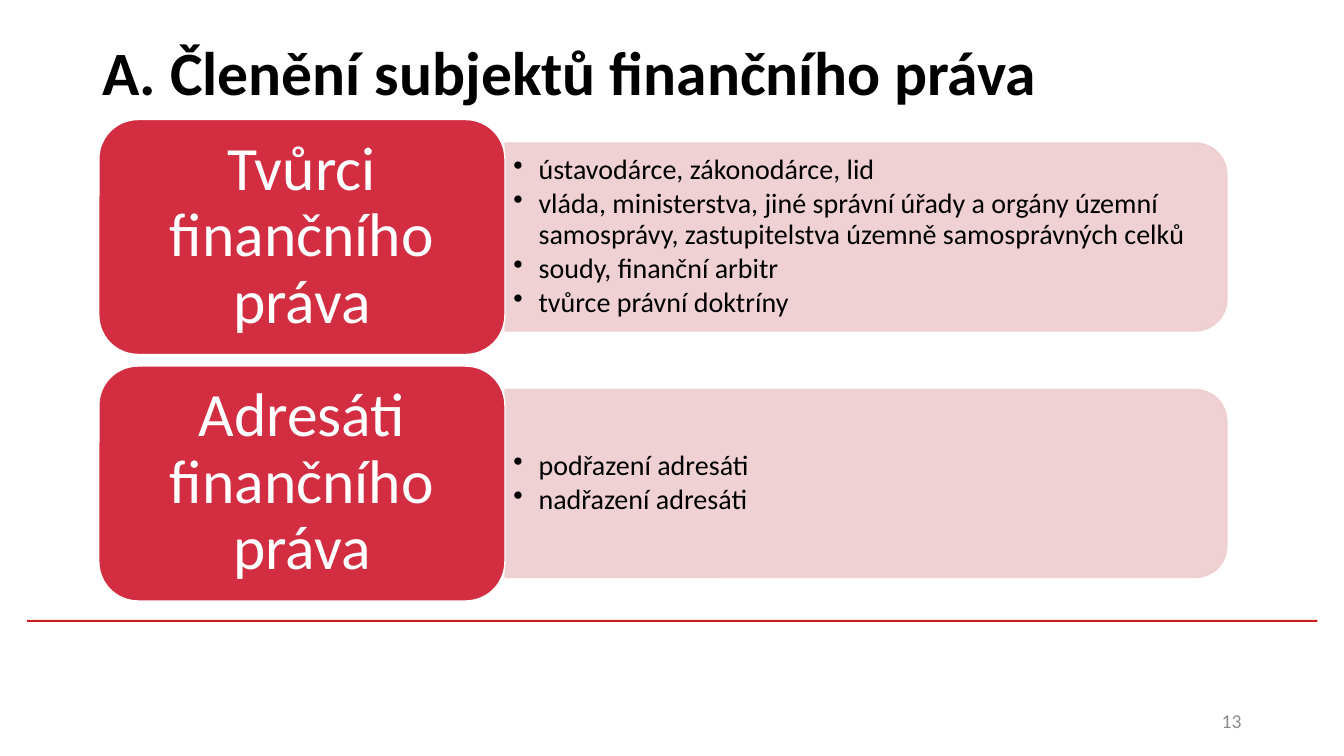
"""Build the slide on how the subjects of financial law are divided."""
from dataclasses import dataclass

from lxml.etree import SubElement
from pptx import Presentation
from pptx.dml.color import RGBColor as Color
from pptx.enum.shapes import MSO_SHAPE as Shape
from pptx.enum.text import MSO_ANCHOR as Anchor, PP_ALIGN as Align
from pptx.oxml.ns import qn
from pptx.util import Pt

TITLE = "A. Členění subjektů finančního práva"
PAGE_NUMBER = "13"
GROUPS = [
    ("Tvůrci finančního práva", [
        "ústavodárce, zákonodárce, lid",
        "vláda, ministerstva, jiné správní úřady a orgány územní samosprávy, "
        "zastupitelstva územně samosprávných celků",
        "soudy, finanční arbitr",
        "tvůrce právní doktríny",
    ]),
    ("Adresáti finančního práva", ["podřazení adresáti", "nadřazení adresáti"]),
]


@dataclass(frozen=True)
class Theme:
    font: str = "Calibri"
    black: str = "000000"
    white: str = "FFFFFF"
    gray: str = "8C8C8C"
    label: str = "D22D40"
    panel: str = "EECDCF"
    rule: str = "CD1F21"
    heading: int = 44
    body: int = 20
    small: int = 14


THEME = Theme()
PAGE_WIDTH, PAGE_HEIGHT = 960, 540
LABEL_LEFT, LABEL_TOP, LABEL_WIDTH, LABEL_HEIGHT = 70.6, 85.4, 290.1, 167.8
ROW_PITCH = 176.1
PANEL_WIDTH, PANEL_HEIGHT = 515.6, 134.2
LIST_WIDTH, LIST_HEIGHT = 509, 121
BULLET_INDENT = 18


def set_alpha(fill, percent):
    """Make a solid fill partly transparent."""
    color = fill._xPr.find(qn("a:solidFill"))[0]
    SubElement(color, qn("a:alpha")).set("val", str(percent * 1000))


def add_block(page, kind, frame, fill, line=None):
    """Add a filled preset shape, outlined when a line colour is given."""
    block = page.shapes.add_shape(kind, *map(Pt, frame))
    block.shadow.inherit = False
    block.fill.solid()
    block.fill.fore_color.rgb = Color.from_string(fill)
    if line:
        block.line.color.rgb = Color.from_string(line)
        block.line.width = Pt(1)
    else:
        block.line.fill.background()
    return block


def write(shape, lines, size, color, align=Align.LEFT, margins=(7.2, 3.6),
          bold=False, spacing=None, after=0, bullet=False):
    """Fill a shape with vertically centred paragraphs in one style."""
    frame = shape.text_frame
    frame.word_wrap = True
    frame.vertical_anchor = Anchor.MIDDLE
    frame.margin_left = frame.margin_right = Pt(margins[0])
    frame.margin_top = frame.margin_bottom = Pt(margins[1])
    for index, line in enumerate(lines):
        para = frame.paragraphs[0] if index == 0 else frame.add_paragraph()
        para.text = line
        para.alignment = align
        para.line_spacing = spacing
        para.space_after = Pt(after)
        if bullet:
            props = para._p.get_or_add_pPr()
            props.set("marL", str(Pt(BULLET_INDENT)))
            props.set("indent", str(-Pt(BULLET_INDENT)))
            SubElement(props, qn("a:buChar")).set("char", "•")
        para.font.name = THEME.font
        para.font.size = Pt(size)
        para.font.bold = bold
        para.font.color.rgb = Color.from_string(color)


def add_group(page, row, name, items):
    """Add one row: a pale panel with its list and the red label."""
    top = LABEL_TOP + row * ROW_PITCH
    middle = top + LABEL_HEIGHT / 2
    panel_left = LABEL_LEFT + LABEL_WIDTH
    center = panel_left + PANEL_WIDTH / 2

    panel = add_block(
        page, Shape.ROUND_2_SAME_RECTANGLE,
        (center - PANEL_HEIGHT / 2, middle - PANEL_WIDTH / 2,
         PANEL_HEIGHT, PANEL_WIDTH),
        THEME.panel, THEME.panel)
    panel.rotation = 90
    set_alpha(panel.fill, 90)
    set_alpha(panel.line.fill, 90)

    box = page.shapes.add_textbox(*map(Pt, (
        panel_left, middle - LIST_HEIGHT / 2, LIST_WIDTH, LIST_HEIGHT)))
    write(box, items, THEME.body, THEME.black, margins=(6, 3),
          spacing=0.9, after=3, bullet=True)

    label = add_block(page, Shape.ROUNDED_RECTANGLE,
                      (LABEL_LEFT, top, LABEL_WIDTH, LABEL_HEIGHT),
                      THEME.label, THEME.white)
    write(label, [name], THEME.heading, THEME.white, Align.CENTER,
          margins=(21, 14), spacing=0.9)


def main():
    """Lay out the slide and save it."""
    deck = Presentation()
    deck.slide_width, deck.slide_height = Pt(PAGE_WIDTH), Pt(PAGE_HEIGHT)
    page = deck.slides.add_slide(deck.slide_layouts[6])

    add_block(page, Shape.RECTANGLE, (19.4, 442.8, 921.6, 1.5), THEME.rule)
    title = page.shapes.add_textbox(Pt(66), Pt(1.5), Pt(828), Pt(104.4))
    write(title, [TITLE], THEME.heading, THEME.black, bold=True, spacing=0.9)
    number = page.shapes.add_textbox(Pt(678), Pt(500.5), Pt(216), Pt(28.8))
    write(number, [PAGE_NUMBER], THEME.small, THEME.gray, Align.RIGHT)

    for row, (name, items) in enumerate(GROUPS):
        add_group(page, row, name, items)
    deck.save("out.pptx")


if __name__ == "__main__":
    main()
